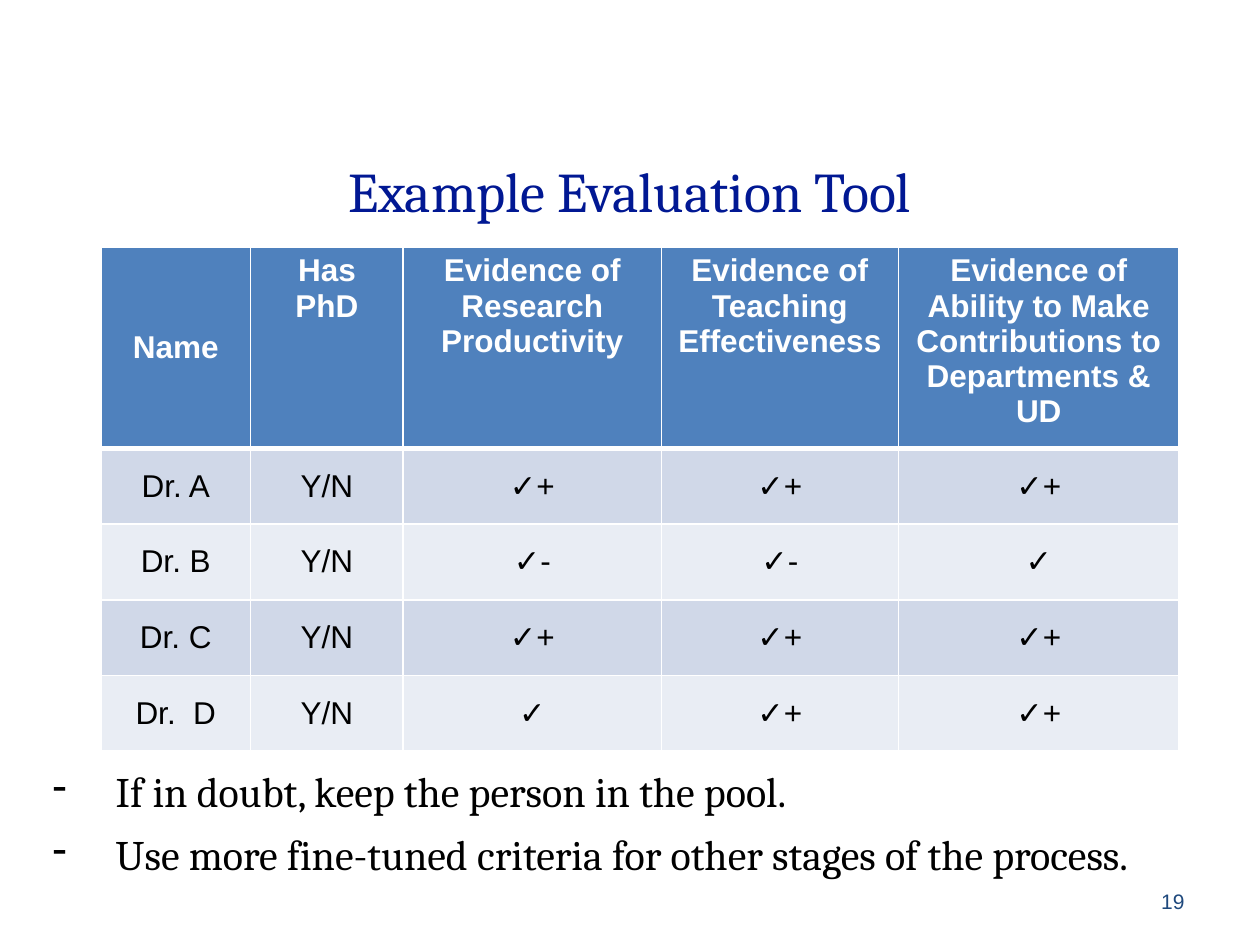
from lxml import etree
from pptx import Presentation
from pptx import util as u
from pptx.dml.color import RGBColor
from pptx.enum import text
from pptx.oxml import ns

COLUMN_WIDTHS = [1.19, 1.21, 2.05, 1.88, 2.23]
ROW_HEIGHTS = [1.2, 0.6, 0.6, 0.6, 0.6]
HEADER_FILL = "4F81BD"
BAND_FILLS = ["E9EDF4", "D0D8E8"]
EVALUATIONS = [
    ["Name", "Has PhD", "Evidence of Research Productivity",
     "Evidence of Teaching Effectiveness",
     "Evidence of Ability to Make Contributions to Departments & UD"],
    ["Dr. A", "Y/N", "✓+", "✓+", "✓+"],
    ["Dr. B", "Y/N", "✓-", "✓-", "✓"],
    ["Dr. C", "Y/N", "✓+", "✓+", "✓+"],
    ["Dr.  D", "Y/N", "✓", "✓+", "✓+"],
]
ADVICE = [
    "If in doubt, keep the person in the pool.",
    "Use more fine-tuned criteria for other stages of the process.",
]


def color(hex_string):
    return RGBColor.from_string(hex_string)


def add_run(paragraph, words, font, size, hex_string, bold=False):
    run = paragraph.add_run()
    run.text = words
    run.font.name = font
    run.font.size = u.Pt(size)
    run.font.bold = bold
    run.font.color.rgb = color(hex_string)


def add_text_frame(slide, left, top, width, height, anchor):
    box = slide.shapes.add_textbox(*map(u.Inches, (left, top, width, height)))
    frame = box.text_frame
    frame.word_wrap = True
    frame.vertical_anchor = anchor
    return frame


def add_label(slide, place, words, font, size, hex_string, alignment):
    frame = add_text_frame(slide, *place, text.MSO_ANCHOR.MIDDLE)
    paragraph = frame.paragraphs[0]
    paragraph.alignment = alignment
    add_run(paragraph, words, font, size, hex_string)


def set_borders(cell, bottom_width):
    properties = cell._tc.get_or_add_tcPr()
    for side, width in (("L", 1), ("R", 1), ("T", 1), ("B", bottom_width)):
        line = etree.SubElement(properties, ns.qn(f"a:ln{side}"), w=str(u.Pt(width)))
        fill = etree.SubElement(line, ns.qn("a:solidFill"))
        etree.SubElement(fill, ns.qn("a:srgbClr"), val="FFFFFF")


def fill_cell(cell, words, row, column):
    header = row == 0
    set_borders(cell, 3 if header else 1)
    cell.fill.solid()
    cell.fill.fore_color.rgb = color(HEADER_FILL if header else BAND_FILLS[row % 2])
    top_aligned = header and column > 0
    cell.vertical_anchor = text.MSO_ANCHOR.TOP if top_aligned else text.MSO_ANCHOR.MIDDLE
    paragraph = cell.text_frame.paragraphs[0]
    paragraph.alignment = text.PP_ALIGN.CENTER
    add_run(paragraph, words, "Arial", 18, "FFFFFF" if header else "000000", header)


def add_evaluation_table(slide, left, top):
    table = slide.shapes.add_table(
        len(ROW_HEIGHTS), len(COLUMN_WIDTHS), u.Inches(left), u.Inches(top),
        u.Inches(sum(COLUMN_WIDTHS)), u.Inches(sum(ROW_HEIGHTS))).table
    for column, width in zip(table.columns, COLUMN_WIDTHS):
        column.width = u.Inches(width)
    for row, height in zip(table.rows, ROW_HEIGHTS):
        row.height = u.Inches(height)
    for row, values in enumerate(EVALUATIONS):
        for column, words in enumerate(values):
            fill_cell(table.cell(row, column), words, row, column)


def add_dash(paragraph, indent):
    properties = paragraph._p.get_or_add_pPr()
    properties.set("marL", str(u.Inches(indent)))
    properties.set("indent", str(-u.Inches(indent)))
    etree.SubElement(properties, ns.qn("a:buChar"), char="-")


def add_advice(slide):
    frame = add_text_frame(slide, 0.32, 5.93, 9.52, 1.09, text.MSO_ANCHOR.TOP)
    frame.auto_size = text.MSO_AUTO_SIZE.SHAPE_TO_FIT_TEXT
    for index, words in enumerate(ADVICE):
        paragraph = frame.add_paragraph() if index else frame.paragraphs[0]
        add_dash(paragraph, 0.5)
        paragraph.line_spacing = 1.25
        add_run(paragraph, words, "Cambria", 24, "000000")


def main():
    presentation = Presentation()
    presentation.slide_width = u.Inches(10)
    presentation.slide_height = u.Inches(7.5)
    slide = presentation.slides.add_slide(presentation.slide_layouts[6])
    add_label(slide, (0.5, 0.97, 9, 1.08), "Example Evaluation Tool",
              "Cambria", 32, "011893", text.PP_ALIGN.CENTER)
    add_label(slide, (7.17, 6.95, 2.33, 0.4), "19",
              "Arial", 12, "1F497D", text.PP_ALIGN.RIGHT)
    add_evaluation_table(slide, 0.8, 1.96)
    add_advice(slide)
    presentation.save("out.pptx")


if __name__ == "__main__":
    main()
